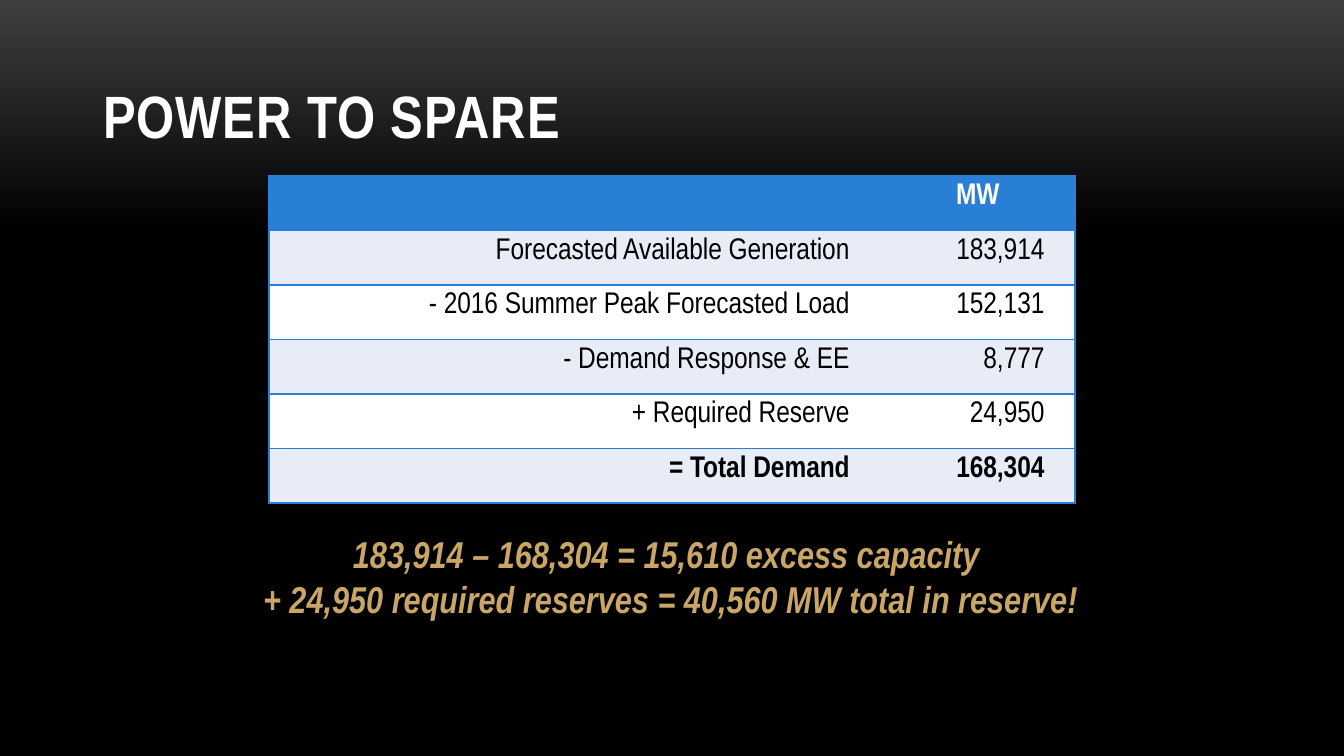
"""Build the "Power to spare" slide with its capacity table and conclusion."""
from lxml import etree
from pptx import Presentation
from pptx.dml.color import RGBColor
from pptx.enum.text import MSO_ANCHOR, PP_ALIGN
from pptx.oxml.ns import qn
from pptx.util import Cm, Pt

BOTTOM = MSO_ANCHOR.BOTTOM
CENTER, RIGHT = PP_ALIGN.CENTER, PP_ALIGN.RIGHT
BLUE, PALE, WHITE, BLACK, GOLD = "297FD5", "E8ECF7", "FFFFFF", "000000", "CAA666"


def rgb(value):
    return RGBColor.from_string(value)


def format_text(paragraph, size, color, bold=True, italic=False):
    for run in paragraph.runs:
        run.font.name = "Arial Narrow"
        run.font.size = Pt(size)
        run.font.bold = bold
        run.font.italic = italic
        run.font.color.rgb = rgb(color)


prs = Presentation()
prs.slide_width, prs.slide_height = Cm(25.4), Cm(14.29)
slide = prs.slides.add_slide(prs.slide_layouts[6])

backdrop = slide.background.fill
backdrop.gradient()
backdrop.gradient_angle = 270
for stop, position, color in zip(backdrop.gradient_stops, (0, 0.31), ("3F3F3F", BLACK)):
    stop.position = position
    stop.color.rgb = rgb(color)

title = slide.shapes.add_textbox(Cm(1.7), Cm(0.58), Cm(22.02), Cm(2.39)).text_frame
title.word_wrap = True
title.vertical_anchor = BOTTOM
title.text = "POWER TO SPARE"
format_text(title.paragraphs[0], 32, WHITE)
title.paragraphs[0].runs[0].font._element.set("spc", "50")

balance = [
    ("", "MW"),
    ("Forecasted Available Generation", "183,914"),
    ("- 2016 Summer Peak Forecasted Load", "152,131"),
    ("- Demand Response & EE", "8,777"),
    ("+ Required Reserve", "24,950"),
    ("= Total Demand", "168,304"),
]
table = slide.shapes.add_table(
    len(balance), 2, Cm(5.08), Cm(3.33), Cm(15.24), Cm(6.18)).table
table.columns[0].width, table.columns[1].width = Cm(11.56), Cm(3.68)

for row, entries in enumerate(balance):
    table.rows[row].height = Cm(1.03)
    header, total = row == 0, row == len(balance) - 1
    for column, entry in enumerate(entries):
        cell = table.cell(row, column)
        cell.margin_left = cell.margin_right = Cm(0.58)
        cell.text = entry
        paragraph = cell.text_frame.paragraphs[0]
        paragraph.alignment = CENTER if header else RIGHT
        format_text(paragraph, 16, WHITE if header else BLACK, header or total)

        properties = cell._tc.get_or_add_tcPr()
        outer_side = ("lnL", "lnR")[column]
        for side in ("lnL", "lnR", "lnT", "lnB"):
            border = etree.SubElement(properties, qn(f"a:{side}"), w="12700")
            if side in (outer_side, "lnT", "lnB"):
                solid = etree.SubElement(border, qn("a:solidFill"))
                etree.SubElement(solid, qn("a:srgbClr"), val=BLUE)
            else:
                etree.SubElement(border, qn("a:noFill"))
        cell.fill.solid()
        cell.fill.fore_color.rgb = rgb(BLUE if header else PALE if row % 2 else WHITE)

conclusion = slide.shapes.add_textbox(Cm(0.51), Cm(9.91), Cm(24.33), Cm(1.96)).text_frame
conclusion.word_wrap = True
conclusion.text = (
    "183,914 – 168,304 = 15,610 excess capacity \n"
    "+ 24,950 required reserves = 40,560 MW total in reserve!"
)
for paragraph in conclusion.paragraphs:
    paragraph.alignment = CENTER
    format_text(paragraph, 20, GOLD, italic=True)

prs.save("out.pptx")
